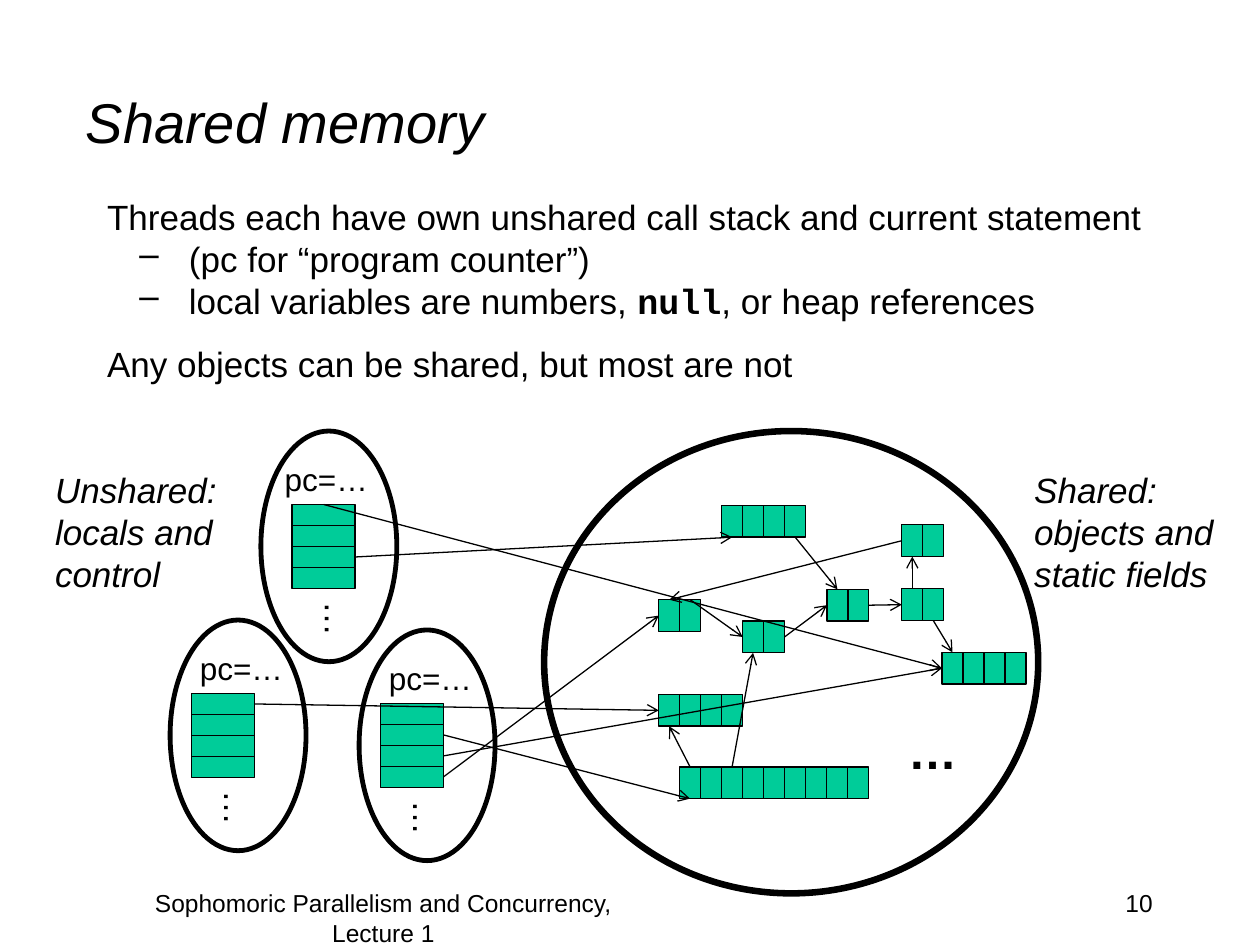
from lxml.etree import SubElement
from pptx import Presentation
from pptx.dml.color import RGBColor
from pptx.enum.shapes import MSO_CONNECTOR, MSO_SHAPE
from pptx.enum.text import MSO_ANCHOR, MSO_AUTO_SIZE, PP_ALIGN
from pptx.oxml.ns import qn
from pptx.util import Cm, Pt

COLORS = {"ink": "000000", "cell": "00CC99"}
FONT, CODE_FONT = "Arial", "Courier New"
TOP, LEFT, BOTTOM, RIGHT = range(4)

# Cell sizes in cm
HEAP_W, HEAP_H = 1.27 / 3, 0.64
STACK_W, STACK_H = 1.27, 1.27 / 3

# Heap objects: left, top, number of cells
HEAP = {
    "pair_a": (13.28, 12.09, 2),
    "pair_b": (14.97, 12.52, 2),
    "pair_c": (16.67, 11.88, 2),
    "pair_d": (18.18, 11.87, 2),
    "pair_e": (18.18, 10.58, 2),
    "quad_top": (14.55, 10.19, 4),
    "quad_right": (18.99, 13.15, 4),
    "quad_low": (13.28, 14.0, 4),
    "long": (13.7, 15.46, 9),
}

# Threads: oval left, oval top, stack left, label left
THREADS = {
    "thread_1": (5.26, 8.69, 5.89, 5.49),
    "thread_2": (3.43, 12.5, 3.86, 3.78),
    "thread_3": (7.24, 12.7, 7.67, 7.59),
}

# References: (object, cell, side) to (object, cell, side)
REFERENCES = [
    (("quad_top", 3, BOTTOM), ("pair_c", 0, TOP)),
    (("pair_a", 1, TOP), ("pair_b", 0, LEFT)),
    (("pair_b", 1, RIGHT), ("pair_c", 0, LEFT)),
    (("long", 0, TOP), ("quad_low", 0, BOTTOM)),
    (("long", 2, TOP), ("pair_b", 0, BOTTOM)),
    (("thread_1", 0, TOP), ("quad_right", 0, LEFT)),
    (("thread_1", 2, RIGHT), ("quad_top", 0, BOTTOM)),
    (("thread_2", 0, RIGHT), ("quad_low", 0, LEFT)),
    (("thread_3", 1, RIGHT), ("long", 0, BOTTOM)),
    (("thread_3", 3, RIGHT), ("pair_a", 0, LEFT)),
    (("thread_3", 2, RIGHT), ("quad_right", 0, LEFT)),
    (("pair_c", 1, RIGHT), ("pair_d", 0, LEFT)),
    (("pair_d", 0, TOP), ("pair_e", 0, BOTTOM)),
    (("pair_e", 0, LEFT), ("pair_a", 0, TOP)),
    (("pair_d", 1, BOTTOM), ("quad_right", 0, TOP)),
]


def color(name):
    return RGBColor.from_string(COLORS[name])


def add_run(p, text, size, font=FONT, bold=False, italic=False):
    r = p.add_run()
    r.text = text
    r.font.size, r.font.name = Pt(size), font
    r.font.bold, r.font.italic = bold, italic
    r.font.color.rgb = color("ink")


def add_text(s, box, lines, size, align=PP_ALIGN.LEFT, wrap=False, **style):
    """Each line is a list of (text, style) runs or a plain string."""
    sp = s.shapes.add_textbox(*map(Cm, box))
    tf = sp.text_frame
    tf.word_wrap = wrap
    tf.auto_size = MSO_AUTO_SIZE.NONE if wrap else MSO_AUTO_SIZE.SHAPE_TO_FIT_TEXT
    for i, line in enumerate(lines):
        p = tf.paragraphs[0] if i == 0 else tf.add_paragraph()
        p.alignment = align
        for text, extra in [(line, {})] if isinstance(line, str) else line:
            add_run(p, text, size, **style, **extra)
    return sp


def add_dash(p):
    pPr = p._p.get_or_add_pPr()
    pPr.set("marL", str(Cm(1.65)))
    pPr.set("indent", str(Cm(-1)))
    SubElement(pPr, qn("a:buChar")).set("char", "–")


def add_outlined(s, kind, box, width, fill=None):
    sp = s.shapes.add_shape(kind, *map(Cm, box))
    sp.shadow.inherit = False
    if fill:
        sp.fill.solid()
        sp.fill.fore_color.rgb = color(fill)
    else:
        sp.fill.background()
    sp.line.color.rgb = color("ink")
    sp.line.width = Pt(width)
    return sp


def add_cells(s, left, top, count, w, h, down=False):
    dx, dy = (0, h) if down else (w, 0)
    return [add_outlined(s, MSO_SHAPE.RECTANGLE, (left + i * dx, top + i * dy, w, h), 0.75, "cell")
            for i in range(count)]


def add_thread(s, left, top, stack_left, label_left):
    add_outlined(s, MSO_SHAPE.OVAL, (left, top, 2.74, 4.65), 2.75)
    add_text(s, (label_left, top + 0.46, 2.21, 1.02), ["pc=…"], 18)
    dots = add_text(s, (stack_left + 0.32, top + 3.23, 1.22, 1.12), ["…"], 20)
    dots.rotation = 90
    return add_cells(s, stack_left, top + 1.48, 4, STACK_W, STACK_H, down=True)


def add_reference(s, cells, start, end):
    line = s.shapes.add_connector(MSO_CONNECTOR.STRAIGHT, 0, 0, 0, 0)
    for join, (name, i, side) in ((line.begin_connect, start), (line.end_connect, end)):
        join(cells[name][i], side)
    line.line.color.rgb = color("ink")
    line.line.width = Pt(0.75)
    SubElement(line.line._get_or_add_ln(), qn("a:tailEnd")).set("type", "arrow")
    SubElement(line._element.spPr, qn("a:effectLst"))


def main():
    prs = Presentation()
    prs.slide_width, prs.slide_height = Cm(25.4), Cm(19.05)
    s = prs.slides.add_slide(prs.slide_layouts[6])

    # Title and footer
    title = add_text(s, (1.48, 0.85, 21.59, 3.18), ["Shared memory"], 32, wrap=True, italic=True)
    title.text_frame.vertical_anchor = MSO_ANCHOR.MIDDLE
    add_text(s, (18.2, 17.78, 5.29, 1.27), ["10"], 14, PP_ALIGN.RIGHT, wrap=True)
    add_text(s, (2.12, 17.78, 11.22, 1.27), ["Sophomoric Parallelism and Concurrency, Lecture 1"],
             14, PP_ALIGN.CENTER, wrap=True)

    # Body
    body = add_text(s, (1.91, 3.81, 22.75, 4.12), [
        "Threads each have own unshared call stack and current statement",
        "(pc for “program counter”)",
        [("local variables are numbers, ", {}),
         ("null", {"font": CODE_FONT, "bold": True}),
         (", or heap references", {})],
        "Any objects can be shared, but most are not",
    ], 20, wrap=True)
    paragraphs = body.text_frame.paragraphs
    for p in paragraphs[1:3]:
        add_dash(p)
    paragraphs[3].space_before = Pt(12)

    # Shared heap
    add_outlined(s, MSO_SHAPE.OVAL, (10.97, 8.69, 9.96, 9.32), 3.75)
    cells = {name: add_cells(s, *place, HEAP_W, HEAP_H) for name, place in HEAP.items()}
    add_text(s, (18.06, 14.4, 1.5, 1.45), ["…"], 28, bold=True)

    # Unshared threads
    for name, place in THREADS.items():
        cells[name] = add_thread(s, *place)

    # References between cells
    for start, end in REFERENCES:
        add_reference(s, cells, start, end)

    # Side captions
    add_text(s, (0.86, 9.32, 3.91, 2.82), ["Unshared:", "locals and", "control"], 20, italic=True)
    add_text(s, (20.6, 9.32, 4.17, 2.82), ["Shared:", "objects and", "static fields"], 20, italic=True)

    prs.save("out.pptx")


if __name__ == "__main__":
    main()
